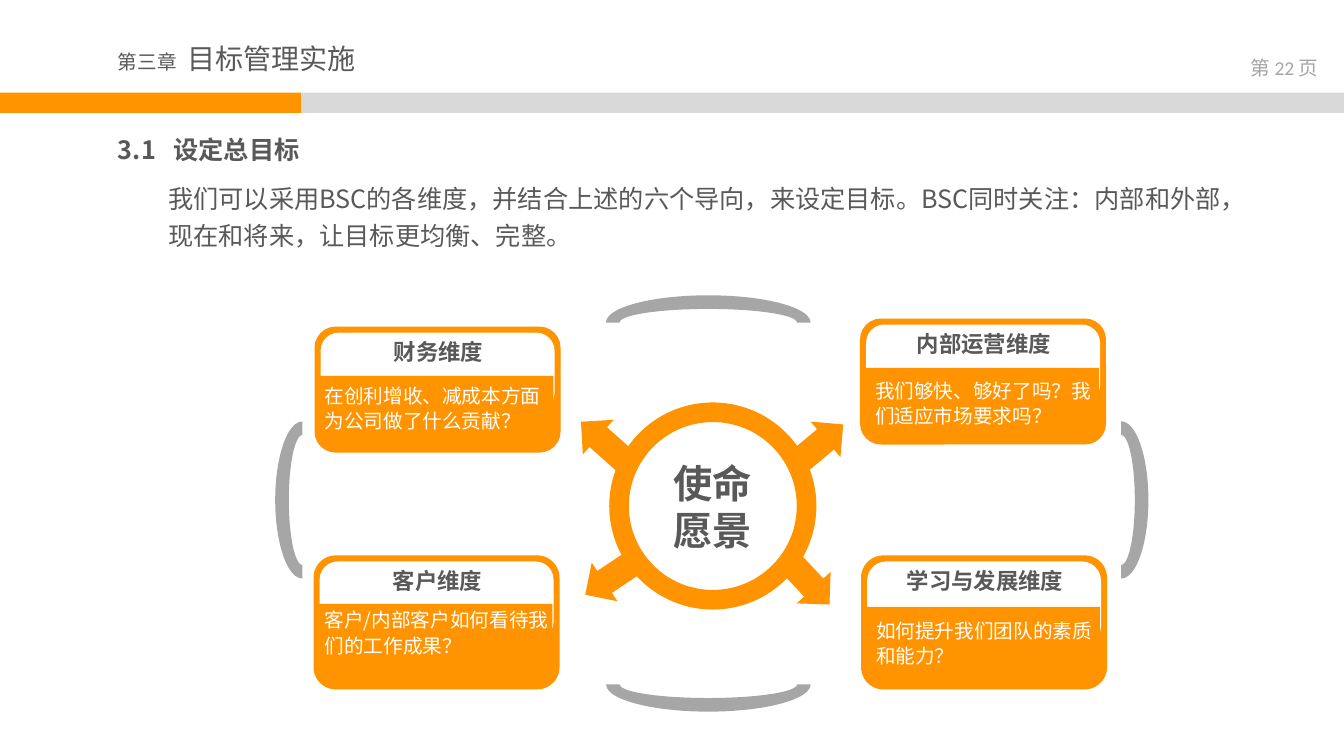
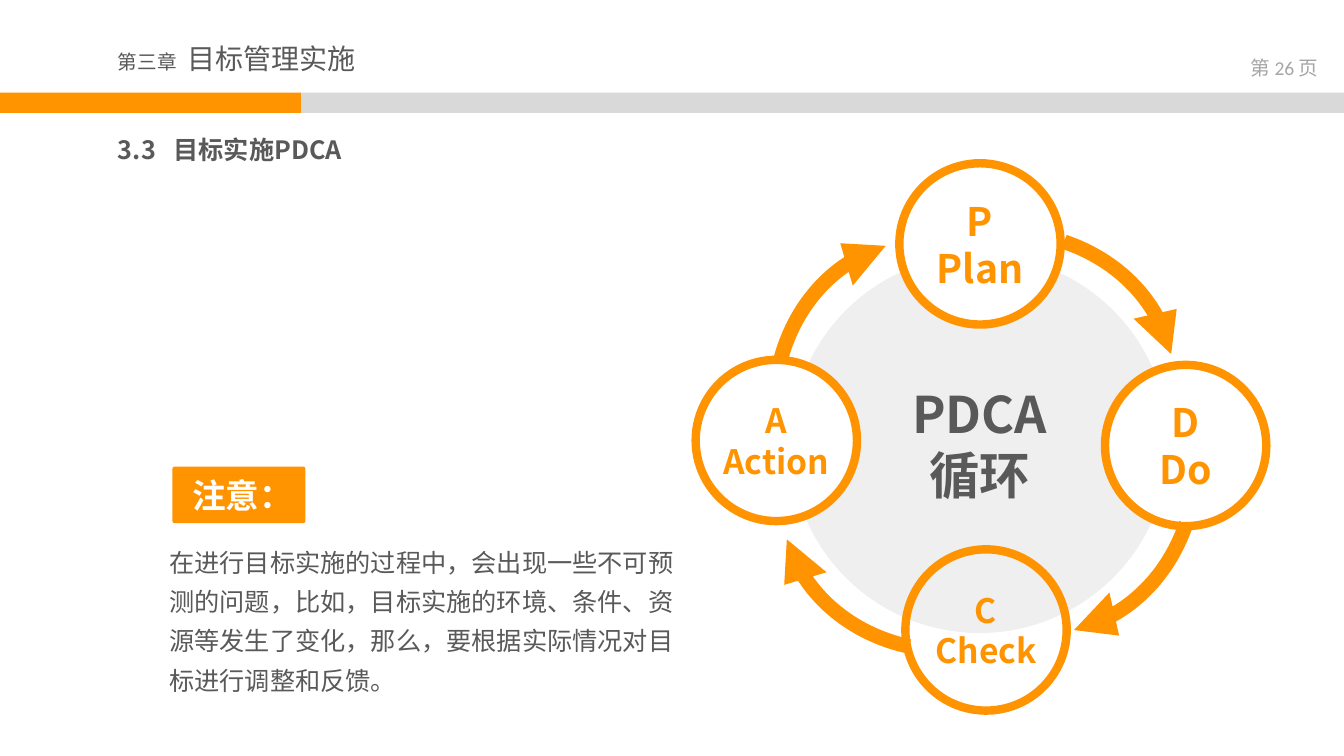
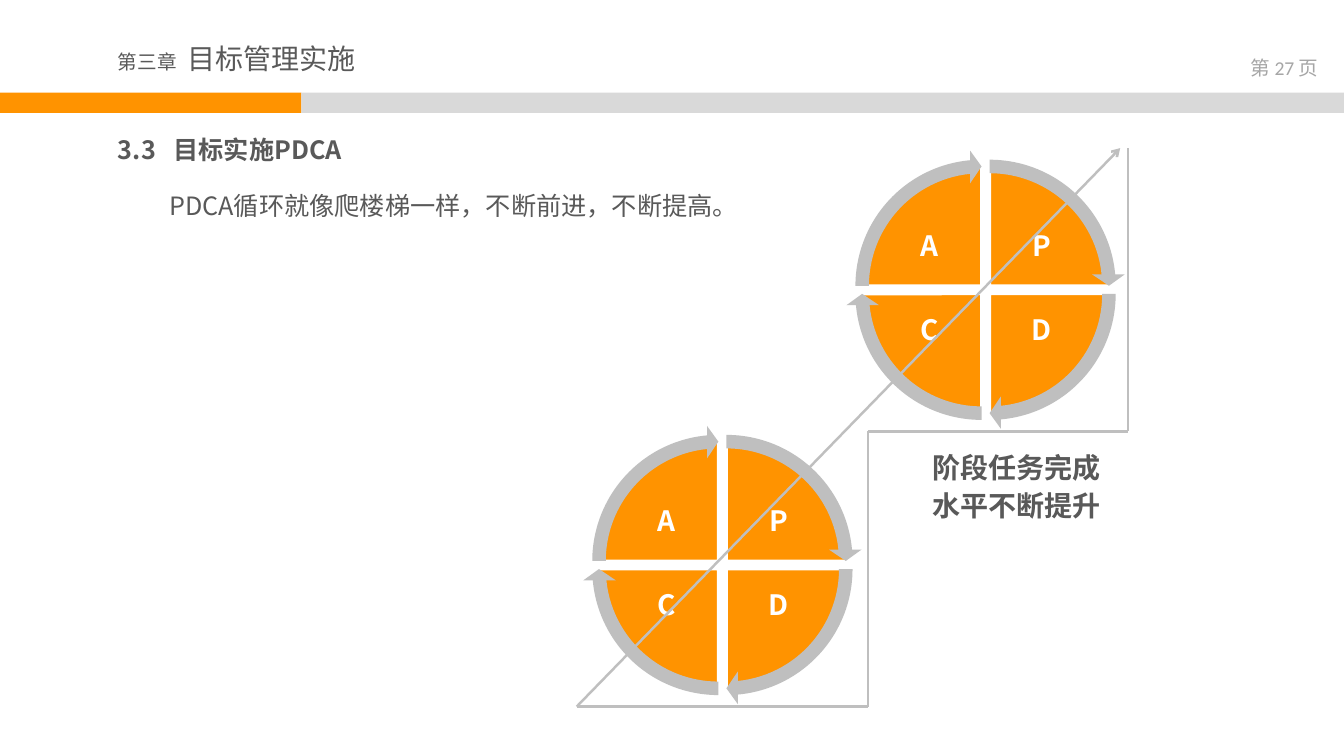
import dataclasses

import lxml.etree
import pptx
import pptx.dml.color
import pptx.enum.shapes
import pptx.enum.text
import pptx.oxml.ns
import pptx.util

SHAPE = pptx.enum.shapes.MSO_SHAPE
ALIGN = pptx.enum.text.PP_ALIGN
ANCHOR = pptx.enum.text.MSO_ANCHOR
qn = pptx.oxml.ns.qn


@dataclasses.dataclass(frozen=True)
class Theme:
    orange: str = "FF9300"
    ink: str = "595959"
    white: str = "FFFFFF"
    band: str = "D9D9D9"
    silver: str = "BFBFBF"
    grey: str = "A6A6A6"
    font: str = "Noto Sans CJK SC"
    number_font: str = "Calibri"
    small: int = 14
    card: int = 16
    body: int = 18
    medium: int = 20
    large: int = 24
    huge: int = 28
    hub: int = 36


T = Theme()
EMU_PER_PX = 9144


def px(n):
    return pptx.util.Emu(n * EMU_PER_PX)


def rgb(color):
    return pptx.dml.color.RGBColor.from_string(color)


def child(parent, tag, **attrs):
    return lxml.etree.SubElement(parent, qn(tag), **attrs)


def write(sp, text, size=T.body, color=T.ink, bold=False, align=ALIGN.LEFT,
          anchor=ANCHOR.TOP, spacing=None, inset=None, wrap=True, tab=None):
    tf = sp.text_frame
    tf.word_wrap = wrap
    tf.auto_size = pptx.enum.text.MSO_AUTO_SIZE.NONE
    tf.vertical_anchor = anchor
    if inset is not None:
        tf.margin_left = tf.margin_right = px(inset)
        tf.margin_top = tf.margin_bottom = px(inset)
    paragraphs = [[(line, size, T.font)] for line in text.split("\n")] if isinstance(text, str) else [text]
    for i, runs in enumerate(paragraphs):
        p = tf.add_paragraph() if i else tf.paragraphs[0]
        p.alignment = align
        if spacing:
            p.line_spacing = spacing
        if tab:
            tabs = child(p._p.get_or_add_pPr(), "a:tabLst")
            child(tabs, "a:tab", pos=str(px(tab)), algn="l")
        for words, points, font in runs:
            r = p.add_run()
            r.text = words
            r.font.size = pptx.util.Pt(points)
            r.font.bold = bold
            r.font.color.rgb = rgb(color)
            r.font.name = font
            child(r.font._element, "a:ea", typeface=font)
    return sp


def label(slide, text, x, y, w, h, **fmt):
    return write(slide.shapes.add_textbox(px(x), px(y), px(w), px(h)), text, **fmt)


def draw(slide, kind, x, y, w, h, fill=None, line=None, width=1, rot=0, adj=(), alpha=None):
    sp = slide.shapes.add_shape(kind, px(x), px(y), px(w), px(h))
    sp.shadow.inherit = False
    sp.rotation = rot
    for i, value in enumerate(adj):
        sp.adjustments[i] = value
    if fill:
        sp.fill.solid()
        sp.fill.fore_color.rgb = rgb(fill)
        if alpha:
            color = sp.element.spPr.find(qn("a:solidFill"))[0]
            child(color, "a:alpha", val=str(alpha * 1000))
    else:
        sp.fill.background()
    if line:
        sp.line.color.rgb = rgb(line)
        sp.line.width = pptx.util.Pt(width)
    else:
        sp.line.fill.background()
    return sp


def angle(degrees):
    return degrees % 360 * 0.6


def arc_arrow(slide, x, y, w, h, fill, start, end, head, thickness, rot=0):
    adj = (thickness, angle(head), angle(end), angle(start), 0.06)
    return draw(slide, SHAPE.CIRCULAR_ARROW, x, y, w, h, fill, rot=rot, adj=adj)


def connect(slide, start, end, arrow=False):
    cx = slide.shapes.add_connector(pptx.enum.shapes.MSO_CONNECTOR.STRAIGHT, *map(px, start + end))
    cx.line.color.rgb = rgb(T.silver)
    cx.line.width = pptx.util.Pt(1.75)
    if arrow:
        child(cx.line._get_or_add_ln(), "a:tailEnd", type="arrow")
    child(cx._element.spPr, "a:effectLst")


def share_frame(layout, slide):
    chapter = [("第三章\t", T.small, T.font), ("目标管理实施", T.medium, T.font)]
    parts = [
        draw(slide, SHAPE.RECTANGLE, 0, 92, 299, 20, T.orange),
        draw(slide, SHAPE.RECTANGLE, 299, 92, 1035, 20, T.band),
        label(slide, chapter, 107, 36, 543, 44, anchor=ANCHOR.MIDDLE, tab=69),
    ]
    for number, sp in enumerate(parts, 20):
        sp.element.xpath(".//p:cNvPr")[0].set("id", str(number))
        layout.shapes.element.append(sp.element)


def head(slide, number, title, page):
    sp = slide.shapes.title
    sp.left, sp.top, sp.width, sp.height = px(107), px(128), px(543), px(40)
    write(sp, f"{number}\t{title}", bold=True, anchor=ANCHOR.MIDDLE, tab=55)
    runs = [("第 ", T.small, T.font), (f"{page} ", T.small, T.number_font), ("页", T.small, T.font)]
    label(slide, runs, 1214, 51, 120, 40, color=T.grey, align=ALIGN.CENTER)


def card(slide, x, y, h, title, body, body_dx, body_dy, cap=78, band_dy=49):
    draw(slide, SHAPE.ROUNDED_RECTANGLE, x, y, 244, h, T.orange)
    draw(slide, SHAPE.ROUNDED_RECTANGLE, x + 6, y + 6, 232, cap, T.white, adj=(0.23,))
    draw(slide, SHAPE.RECTANGLE, x + 4, y + band_dy, 233, 67, T.orange)
    label(slide, body, x + body_dx, y + body_dy, 242, 60, size=T.small, color=T.white,
          spacing=pptx.util.Pt(18))
    label(slide, title, x + 30, y + 7, 186, 37, size=T.card, bold=True, align=ALIGN.CENTER)


def mission_hub(slide, x, y):
    hub = draw(slide, SHAPE.OVAL, x + 46, y, 186, 186, line=T.orange, width=14)
    write(hub, "使命愿景", size=T.huge, bold=True, align=ALIGN.CENTER, anchor=ANCHOR.MIDDLE)
    for dx, dy, rot in ((211, 10, 319.9), (7, 140, 146.3), (0, 8, 221.7), (200, 144, 47)):
        draw(slide, SHAPE.RIGHT_ARROW, x + dx, y + dy, 65, 46, T.orange, rot=rot, adj=(0.57, 0.5))


def goal_slide(slide):
    head(slide, "3.1", "设定总目标", 22)
    label(slide, "我们可以采用BSC的各维度，并结合上述的六个导向，来设定目标。BSC同时关注：内部和外部，"
          "现在和将来，让目标更均衡、完整。", 157, 170, 1089, 84, spacing=1.23)
    mission_hub(slide, 568, 409)
    card(slide, 312, 324, 125, "财务维度", "在创利增收、减成本方面为公司做了什么贡献？", 0, 50)
    card(slide, 854, 551, 133, "学习与发展维度", "如何提升我们团队的素质和能力？", 5, 56, 83, 51)
    card(slide, 853, 316, 125, "内部运营维度", "我们够快、够好了吗？我们适应市场要求吗？", 5, 53)
    card(slide, 311, 551, 133, "客户维度", "客户/内部客户如何看待我们的工作成果？", 1, 46, band_dy=48)
    for x, y, w, rot in ((601, 293, 203, 0), (601, 652, 203, 180),
                         (1034, 469, 156, 90), (222, 469, 156, 270)):
        draw(slide, SHAPE.BLOCK_ARC, x, y, w, 54, T.grey, rot=rot)


def pdca_ring(slide, x, y):
    hub = draw(slide, SHAPE.OVAL, x + 94, y + 91, 375, 375, T.band, alpha=42)
    write(hub, "PDCA\n循环", size=T.hub, bold=True, align=ALIGN.CENTER, anchor=ANCHOR.MIDDLE)
    phases = (
        ("P\nPlan", T.huge, T.white, (202, 0), (90, 47), 348, 307.1),
        ("D\nDo", T.huge, T.white, (406, 200), (131, 103), 78, 307.6),
        ("C\nCheck", T.large, None, (208, 383), (61, 139), 164.3, 304.5),
        ("A\nAction", T.large, T.white, (0, 195), (36, 74), 254.3, 306.7),
    )
    for text, size, fill, (dx, dy), (ax, ay), rot, start in phases:
        sp = draw(slide, SHAPE.OVAL, x + dx, y + dy, 160, 160, fill, T.orange, 6)
        write(sp, text, size=size, color=T.orange, bold=True, align=ALIGN.CENTER,
              anchor=ANCHOR.MIDDLE, inset=0)
        arc_arrow(slide, x + ax, y + ay, 408, 365, T.orange, start, 345.64, 13.61, 0.04, rot)


def notice(slide, x, y):
    draw(slide, SHAPE.ROUNDED_RECTANGLE, x + 13, y, 132, 56, T.orange, adj=(0.04,))
    label(slide, "注意：", x + 23, y + 3, 120, 50, size=T.large, color=T.white, bold=True, wrap=False)
    label(slide, "在进行目标实施的过程中，会出现一些不可预测的问题，比如，目标实施的环境、条件、资源等发生了变化，"
          "那么，要根据实际情况对目标进行调整和反馈。", x, y + 66, 532, 166, spacing=1.3)


def cycle_slide(slide):
    head(slide, "3.3", "目标实施PDCA", 26)
    pdca_ring(slide, 690, 162)
    notice(slide, 158, 463)


def wheel(slide, x, y):
    quadrants = (("P", 1, 0, 270), ("D", 1, 1, 0), ("C", 0, 1, 90), ("A", 0, 0, 180))
    for letter, col, row, start in quadrants:
        draw(slide, SHAPE.PIE, x + 15 + 8 * col, y + 15 + 8 * row, 239, 239, T.orange, T.white, 2,
             adj=(angle(start), angle(start + 90)))
        label(slide, letter, x + 39 + 111 * col, y + 64 + 83 * row, 88, 65, size=T.medium,
              color=T.white, bold=True, align=ALIGN.CENTER, anchor=ANCHOR.MIDDLE,
              spacing=0.9, inset=3)
    for _, col, row, start in quadrants:
        arc_arrow(slide, x + 8 * col, y + 8 * row, 269, 269, T.silver, start, start + 84.54, 5.46, 0.05)


def stairs_slide(slide):
    head(slide, "3.3", "目标实施PDCA", 27)
    label(slide, "PDCA循环就像爬楼梯一样，不断前进，不断提高。", 158, 176, 627, 47, spacing=1.25)
    wheel(slide, 578, 422)
    wheel(slide, 839, 149)
    steps = [(572, 701), (861, 701), (861, 428), (1119, 428), (1119, 147)]
    for start, end in zip(steps, steps[1:]):
        connect(slide, start, end)
    connect(slide, steps[0], (1111, 147), arrow=True)
    label(slide, "阶段任务完成\n水平不断提升", 915, 438, 195, 85, size=T.medium, bold=True, spacing=1.12)


def main():
    prs = pptx.Presentation()
    prs.slide_width = pptx.util.Inches(13.33)
    prs.slide_height = pptx.util.Inches(7.5)
    layout = prs.slide_layouts[5]
    builders = (goal_slide, cycle_slide, stairs_slide)
    slides = [prs.slides.add_slide(layout) for _ in builders]
    share_frame(layout, slides[0])
    for build, slide in zip(builders, slides):
        build(slide)
    prs.save("out.pptx")


if __name__ == "__main__":
    main()
